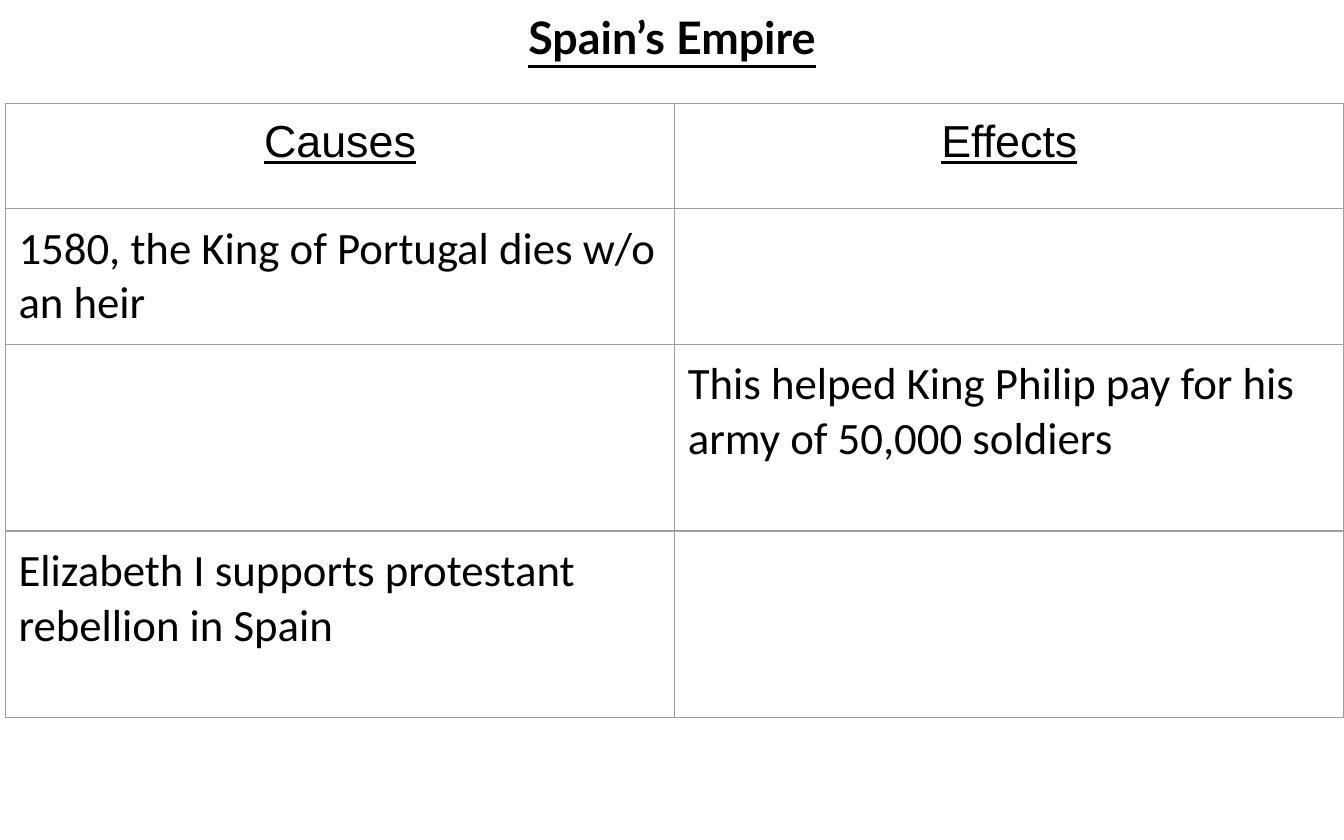
from lxml.etree import SubElement
from pptx import Presentation
from pptx.dml.color import RGBColor
from pptx.enum.text import MSO_ANCHOR, MSO_AUTO_SIZE, PP_ALIGN
from pptx.oxml.ns import qn
from pptx.util import Cm, Pt

COLORS = {"text": "000000", "border": "9E9E9E"}
INSET = Cm(0.25)
HEADERS = ["Causes", "Effects"]
ROWS = [
    ["1580, the King of Portugal dies w/o an heir", ""],
    ["", "This helped King Philip pay for his army of 50,000 soldiers"],
    ["Elizabeth I supports protestant rebellion in Spain", ""],
]
ROW_HEIGHTS = [1.98, 2.34, 3.53, 3.53]


def set_insets(box):
    box.margin_left = box.margin_right = INSET
    box.margin_top = box.margin_bottom = INSET


def add_run(p, text, font, bold=False, underline=False):
    r = p.add_run()
    r.text = text
    r.font.name = font
    r.font.size = Pt(24)
    r.font.bold = bold
    r.font.underline = underline
    r.font.color.rgb = RGBColor.from_string(COLORS["text"])


def add_borders(cell):
    tc_pr = cell._tc.get_or_add_tcPr()
    for side in ("a:lnL", "a:lnR", "a:lnT", "a:lnB"):
        ln = SubElement(tc_pr, qn(side), w=str(Pt(0.75)))
        fill = SubElement(ln, qn("a:solidFill"))
        SubElement(fill, qn("a:srgbClr"), val=COLORS["border"])


def place_title(s, left, top, width, height):
    sp = s.shapes.title
    sp.left, sp.top, sp.width, sp.height = Cm(left), Cm(top), Cm(width), Cm(height)
    tf = sp.text_frame
    tf.word_wrap = True
    tf.auto_size = MSO_AUTO_SIZE.NONE
    tf.vertical_anchor = MSO_ANCHOR.MIDDLE
    set_insets(tf)
    p = tf.paragraphs[0]
    p.alignment = PP_ALIGN.CENTER
    add_run(p, "Spain’s Empire", "Lato", bold=True, underline=True)


def fill_cell(cell, text, is_header):
    add_borders(cell)
    cell.fill.background()
    set_insets(cell)
    if not text:
        return
    p = cell.text_frame.paragraphs[0]
    if is_header:
        p.alignment = PP_ALIGN.CENTER
        add_run(p, text, "Arial", underline=True)
    else:
        p.space_before = Pt(6)
        add_run(p, text, "Calibri")


def place_causes_effects(s, left, top, width):
    cells = [HEADERS] + ROWS
    frame = s.shapes.add_table(len(cells), len(HEADERS), Cm(left), Cm(top),
                               Cm(width), Cm(sum(ROW_HEIGHTS)))
    table = frame.table
    table.first_row = table.horz_banding = False
    for col in table.columns:
        col.width = Cm(width / len(HEADERS))
    for i, (texts, height) in enumerate(zip(cells, ROW_HEIGHTS)):
        table.rows[i].height = Cm(height)
        for j, text in enumerate(texts):
            fill_cell(table.cell(i, j), text, i == 0)


def main():
    prs = Presentation()
    prs.slide_width, prs.slide_height = Cm(25.4), Cm(15.88)
    s = prs.slides.add_slide(prs.slide_layouts[5])
    place_title(s, 0, 0, 25.4, 1.4)
    place_causes_effects(s, 0.1, 1.96, 25.3)
    prs.save("out.pptx")


if __name__ == "__main__":
    main()
